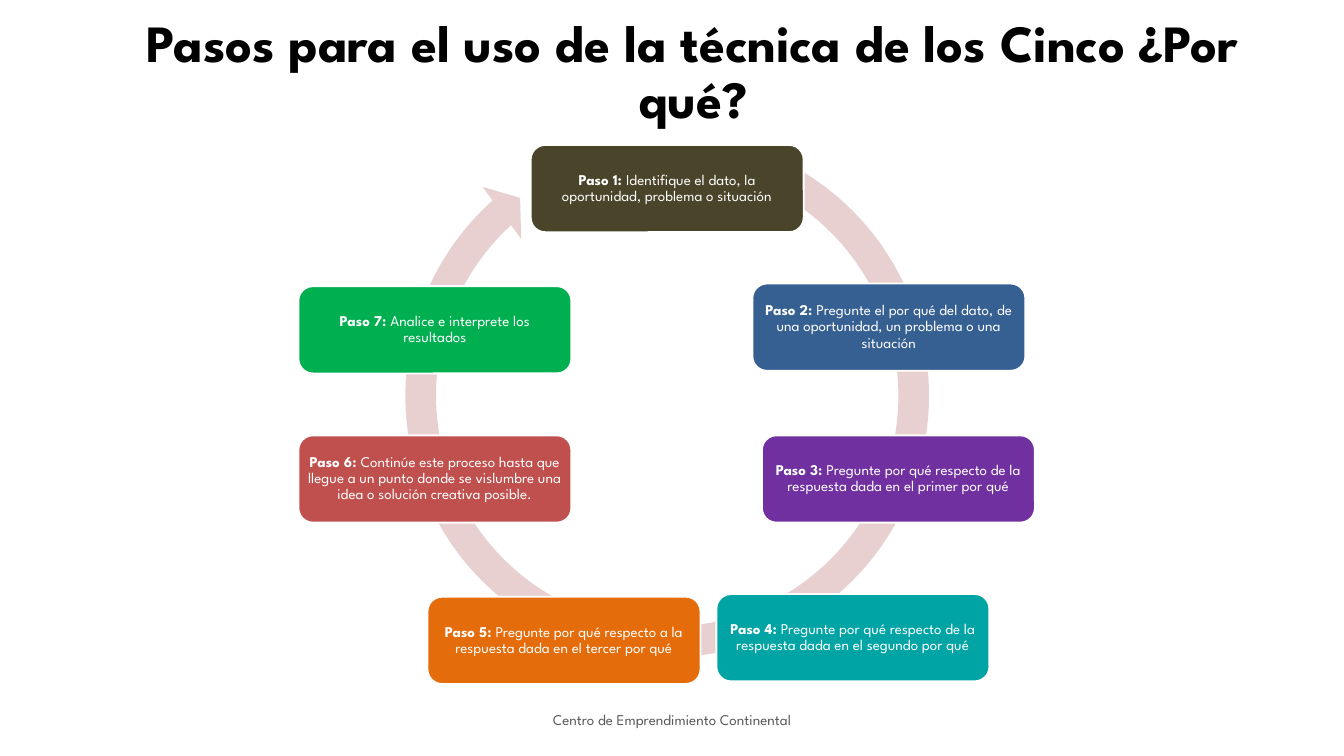
from pptx import Presentation
from pptx.dml.color import RGBColor
from pptx.enum.shapes import MSO_SHAPE
from pptx.enum.text import MSO_ANCHOR, MSO_AUTO_SIZE, PP_ALIGN
from pptx.util import Cm, Pt

FONT = "League Spartan"
COLORS = {
    "black": "000000", "white": "FFFFFF", "gray": "595959", "pink": "E8D0D0",
    "olive": "4A452A", "blue": "376092", "purple": "7030A0", "teal": "00A4A5",
    "orange": "E46C0A", "red": "C0504D", "green": "00B050",
}
BOX = (5.16, 1.65)  # width and height of a step, in cm

# Left, top, color and text of each step, clockwise from the top
STEPS = [
    (10.03, 2.74, "olive", "Identifique el dato, la oportunidad, problema o situación"),
    (14.22, 5.36, "blue", "Pregunte el por qué del dato, de una oportunidad, "
                          "un problema o una situación"),
    (14.4, 8.23, "purple", "Pregunte por qué respecto de la respuesta dada "
                           "en el primer por qué"),
    (13.54, 11.23, "teal", "Pregunte por qué respecto de la respuesta dada "
                           "en el segundo por qué"),
    (8.08, 11.28, "orange", "Pregunte por qué respecto a la respuesta dada "
                            "en el tercer por qué"),
    (5.64, 8.23, "red", "Continúe este proceso hasta que llegue a un punto donde "
                        "se vislumbre una idea o solución creativa posible."),
    (5.64, 5.41, "green", "Analice e interprete los resultados"),
]


def color(name):
    return RGBColor.from_string(COLORS[name])


def write(frame, text, lead="", size=8, tint="white", bold=False, space=0.9, inset=None):
    """Fill a text frame with one centred paragraph and an optional bold lead."""
    frame.word_wrap = True
    frame.auto_size = MSO_AUTO_SIZE.NONE
    frame.vertical_anchor = MSO_ANCHOR.MIDDLE
    if inset is not None:
        frame.margin_left = frame.margin_right = Cm(inset)
        frame.margin_top = frame.margin_bottom = Cm(inset)
    para = frame.paragraphs[0]
    para.alignment = PP_ALIGN.CENTER
    para.line_spacing = space
    for part, heavy in ((lead, True), (text, bold)):
        if part:
            run = para.add_run()
            run.text = part
            run.font.name = FONT
            run.font.size = Pt(size)
            run.font.bold = heavy
            run.font.color.rgb = color(tint)


class Deck:
    def __init__(self, width, height):
        self.prs = Presentation()
        self.prs.slide_width = Cm(width)
        self.prs.slide_height = Cm(height)
        self.slide = self.prs.slides.add_slide(self.prs.slide_layouts[5])

    def title(self, text, left, top, width, height):
        shape = self.slide.shapes.title
        shape.left, shape.top = Cm(left), Cm(top)
        shape.width, shape.height = Cm(width), Cm(height)
        write(shape.text_frame, text, size=28, tint="black", bold=True)

    def shape(self, kind, left, top, width, height, fill):
        shape = self.slide.shapes.add_shape(
            kind, Cm(left), Cm(top), Cm(width), Cm(height))
        shape.shadow.inherit = False
        shape.fill.solid()
        shape.fill.fore_color.rgb = color(fill)
        return shape

    def ring(self, left, top, size, start, end):
        ring = self.shape(MSO_SHAPE.CIRCULAR_ARROW, left, top, size, size, "pink")
        ring.line.fill.background()
        # Angles count 60000 units a degree, adjustments 100000 units a whole
        values = (0.055, 5.5 * 0.6, end * 0.6, start * 0.6, 0.058)
        for index, value in enumerate(values):
            ring.adjustments[index] = value

    def step(self, num, left, top, fill, text):
        box = self.shape(MSO_SHAPE.ROUNDED_RECTANGLE, left, top, *BOX, fill)
        box.line.color.rgb = color("white")
        box.line.width = Pt(1)
        write(box.text_frame, text, lead=f"Paso {num}: ", inset=0.08)

    def note(self, text, left, top, width, height):
        box = self.slide.shapes.add_textbox(Cm(left), Cm(top), Cm(width), Cm(height))
        write(box.text_frame, text, tint="gray", space=1.0)


def main():
    deck = Deck(25.4, 14.29)
    deck.title("Pasos para el uso de la técnica de los Cinco ¿Por qué?",
               2.31, 0, 21.56, 2.77)

    # Cycle: arrow behind, steps in front
    deck.ring(7.34, 2.21, 10.54, start=290.82, end=227.88)
    for num, step in enumerate(STEPS, 1):
        deck.step(num, *step)

    # Footer
    deck.note("Centro de Emprendimiento Continental", 8.41, 13.23, 8.59, 0.76)
    deck.prs.save("out.pptx")


if __name__ == "__main__":
    main()
